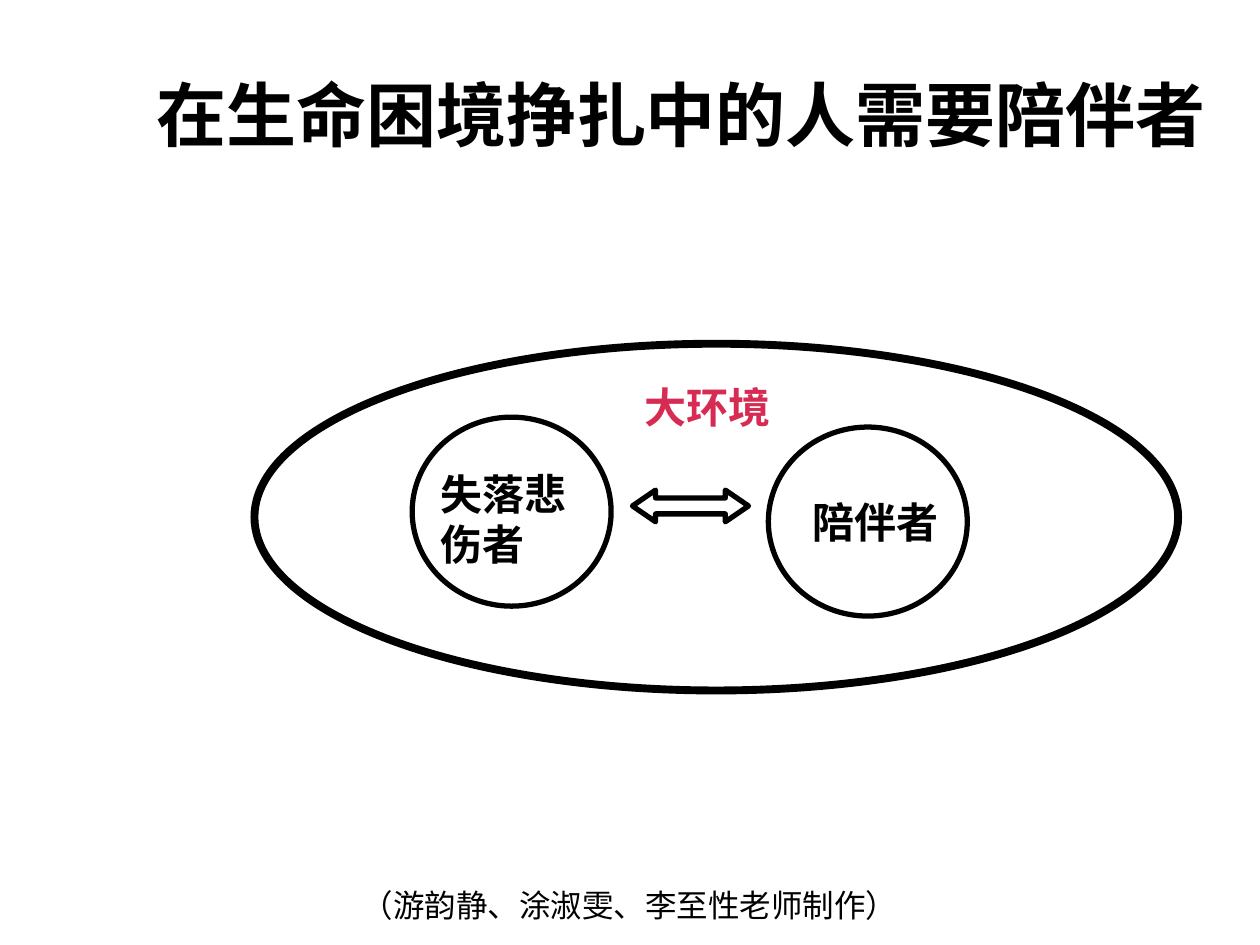
from pptx import Presentation
from pptx.dml.color import RGBColor
from pptx.enum.shapes import MSO_SHAPE
from pptx.enum.text import MSO_ANCHOR, MSO_AUTO_SIZE, PP_ALIGN
from pptx.util import Cm, Pt

ELLIPSE = MSO_SHAPE.OVAL
DOUBLE_ARROW = MSO_SHAPE.LEFT_RIGHT_ARROW
TOP = MSO_ANCHOR.TOP
NO_AUTOFIT = MSO_AUTO_SIZE.NONE
LEFT = PP_ALIGN.LEFT

BLACK = RGBColor(0x00, 0x00, 0x00)
CRIMSON = RGBColor(0xD6, 0x2C, 0x54)


def format_text(shape, text, font_name, size, color, bold, wrap=True):
    text_frame = shape.text_frame
    text_frame.text = text
    text_frame.word_wrap = wrap
    text_frame.auto_size = NO_AUTOFIT
    text_frame.vertical_anchor = TOP
    paragraph = text_frame.paragraphs[0]
    paragraph.alignment = LEFT
    font = paragraph.runs[0].font
    font.name = font_name
    font.size = Pt(size)
    font.bold = bold
    font.color.rgb = color


presentation = Presentation()
presentation.slide_width = Cm(25.4)
presentation.slide_height = Cm(19.05)
slide = presentation.slides.add_slide(presentation.slide_layouts[5])

title = slide.shapes.title
title.left, title.top, title.width, title.height = Cm(2.9), Cm(1.32), Cm(22.5), Cm(1.96)
format_text(title, "在生命困境挣扎中的人需要陪伴者", "Arial", 40, BLACK, True)

diagram = slide.shapes.add_group_shape()
outlines = [
    (ELLIPSE, 5.13, 6.93, 18.62, 6.99, 4.5),
    (ELLIPSE, 8.31, 8.41, 4.01, 3.81, 3),
    (ELLIPSE, 15.49, 8.61, 4.01, 3.81, 3),
    (DOUBLE_ARROW, 12.75, 9.88, 2.34, 0.64, 3),
]
for kind, left, top, width, height, line_width in outlines:
    shape = diagram.shapes.add_shape(kind, Cm(left), Cm(top), Cm(width), Cm(height))
    shape.shadow.inherit = False
    shape.fill.background()
    shape.line.color.rgb = BLACK
    shape.line.width = Pt(line_width)
    if kind == DOUBLE_ARROW:
        shape.adjustments[0] = 0.5
        shape.adjustments[1] = 0.73

labels = [
    (diagram, "大环境", 12.75, 7.57, 1.27, CRIMSON),
    (diagram, "陪伴者", 16.13, 9.88, 1.27, BLACK),
    (slide, "失落悲伤者", 8.64, 9.32, 2.31, BLACK),
]
for parent, text, left, top, height, color in labels:
    label = parent.shapes.add_textbox(Cm(left), Cm(top), Cm(3.18), Cm(height))
    format_text(label, text, "Times New Roman", 24, color, True)

credit = slide.shapes.add_textbox(Cm(7.04), Cm(17.73), Cm(11.3), Cm(1.02))
format_text(credit, "（游韵静、涂淑雯、李至性老师制作）", "Arial", 18, BLACK, False, wrap=False)

presentation.save("out.pptx")
